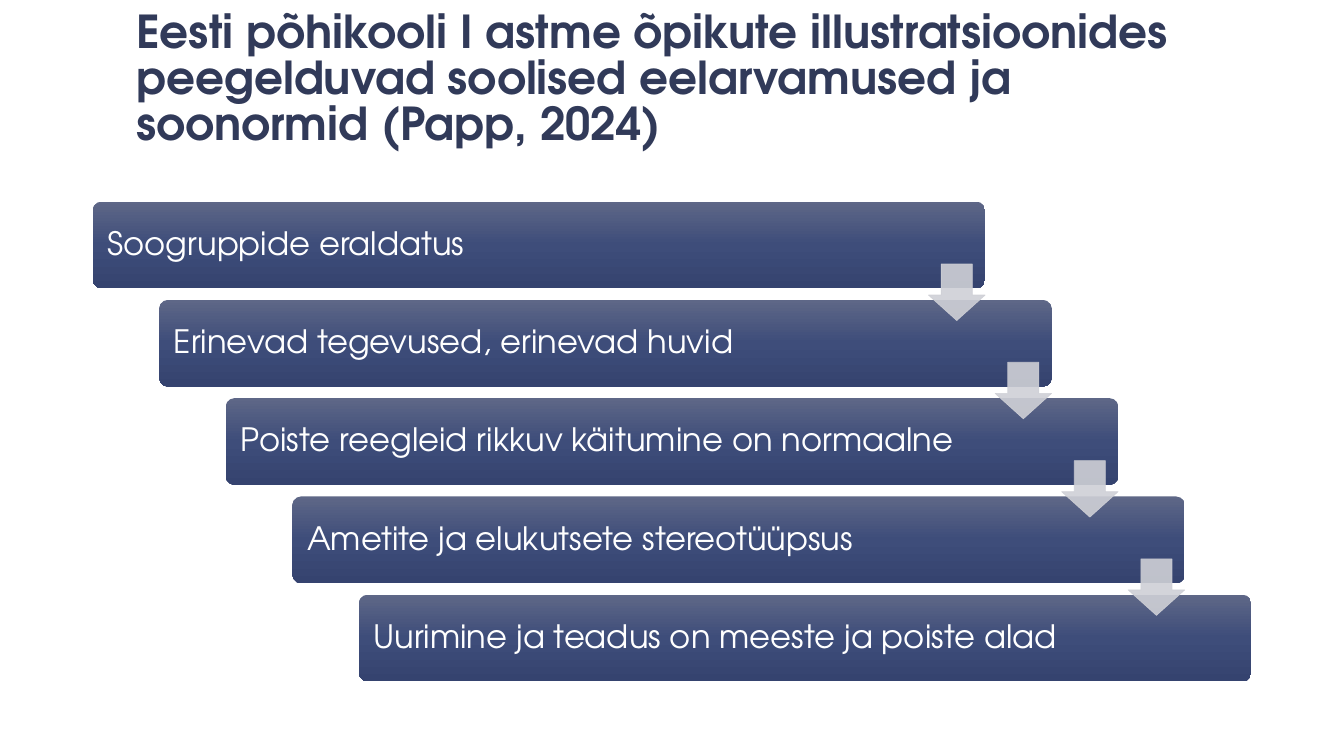
import copy
from dataclasses import dataclass

import pptx
import pptx.dml.color
import pptx.enum.shapes
import pptx.enum.text
import pptx.oxml
import pptx.oxml.ns
import pptx.util
from pptx.util import Inches

SHAPE = pptx.enum.shapes.MSO_SHAPE
ANCHOR = pptx.enum.text.MSO_ANCHOR
qn = pptx.oxml.ns.qn


@dataclass(frozen=True)
class Theme:
    font: str = "TeX Gyre Adventor"
    title_color: str = "313A59"
    bar_text: str = "FFFFFF"
    bar_gradient: tuple[str, ...] = ("5E6787", "3E4D7A", "35436F")
    arrow: str = "CFD0D6"
    arrow_opacity: int = 90
    title_size: float = 32.4
    bar_size: float = 23


@dataclass(frozen=True)
class Box:
    left: float
    top: float
    width: float
    height: float

    def emu(self) -> tuple[int, ...]:
        return tuple(Inches(v) for v in (self.left, self.top, self.width, self.height))


THEME = Theme()
TITLE = "Eesti põhikooli I astme õpikute illustratsioonides peegelduvad soolised eelarvamused ja soonormid (Papp, 2024)"
FINDINGS = (
    "Soogruppide eraldatus",
    "Erinevad tegevused, erinevad huvid",
    "Poiste reegleid rikkuv käitumine on normaalne",
    "Ametite ja elukutsete stereotüüpsus",
    "Uurimine ja teadus on meeste ja poiste alad",
)
FIRST_BAR = Box(0.92, 2, 8.85, 0.86)
STEP_X, STEP_Y = 0.66, 0.975
ARROW_SIZE = 0.56
ARROW_DROP = 0.62


def rgb(color: str) -> pptx.dml.color.RGBColor:
    return pptx.dml.color.RGBColor.from_string(color)


def write(sp, text: str, *, size: float, color: str, bold: bool = False,
          anchor=ANCHOR.MIDDLE, spacing: float = 0.9,
          inset_x: float = 0.12, inset_y: float = 0.1) -> None:
    tf = sp.text_frame
    tf.word_wrap = True
    tf.auto_size = pptx.enum.text.MSO_AUTO_SIZE.NONE
    tf.vertical_anchor = anchor
    tf.margin_left = tf.margin_right = Inches(inset_x)
    tf.margin_top = tf.margin_bottom = Inches(inset_y)
    p = tf.paragraphs[0]
    p.alignment = pptx.enum.text.PP_ALIGN.LEFT
    p.line_spacing = spacing
    p.space_before = pptx.util.Pt(0)
    r = p.add_run()
    r.text = text
    r.font.name = THEME.font
    r.font.size = pptx.util.Pt(size)
    r.font.bold = bold
    r.font.color.rgb = rgb(color)


def fill_gradient(sp, colors: tuple[str, ...]) -> None:
    """Fill from top to bottom with evenly spaced colours."""
    sp.fill.gradient()
    sp.fill.gradient_angle = 270
    stops = sp._element.spPr.find(qn("a:gradFill")).find(qn("a:gsLst"))
    for _ in colors[2:]:
        stops.append(copy.deepcopy(stops[0]))
    for i, (stop, color) in enumerate(zip(sp.fill.gradient_stops, colors)):
        stop.position = i / (len(colors) - 1)
        stop.color.rgb = rgb(color)


def add_bar(s, box: Box, text: str) -> None:
    sp = s.shapes.add_shape(SHAPE.ROUNDED_RECTANGLE, *box.emu())
    sp.shadow.inherit = False
    sp.adjustments[0] = 0.1
    fill_gradient(sp, THEME.bar_gradient)
    sp.line.fill.background()
    write(sp, text, size=THEME.bar_size, color=THEME.bar_text)


def add_arrow(s, box: Box) -> None:
    sp = s.shapes.add_shape(SHAPE.DOWN_ARROW, *box.emu())
    sp.shadow.inherit = False
    sp.adjustments[0], sp.adjustments[1] = 0.55, 0.45
    sp.fill.solid()
    sp.fill.fore_color.rgb = rgb(THEME.arrow)
    sp.line.color.rgb = rgb(THEME.arrow)
    sp.line.width = pptx.util.Pt(0.5)
    for color in sp._element.spPr.iter(qn("a:srgbClr")):
        alpha = pptx.oxml.parse_xml(
            '<a:alpha xmlns:a="http://schemas.openxmlformats.org/drawingml/2006/main"/>')
        alpha.set("val", str(THEME.arrow_opacity * 1000))
        color.append(alpha)


def main() -> None:
    prs = pptx.Presentation()
    prs.slide_width, prs.slide_height = Inches(13.33), Inches(7.5)
    s = prs.slides.add_slide(prs.slide_layouts[5])

    title = s.shapes.title
    title.left, title.top, title.width, title.height = Box(1.22, 0.03, 11.11, 1.53).emu()
    write(title, TITLE, size=THEME.title_size, color=THEME.title_color, bold=True,
          anchor=ANCHOR.BOTTOM, spacing=0.85, inset_x=0.13, inset_y=0.07)

    bars = [Box(FIRST_BAR.left + i * STEP_X, FIRST_BAR.top + i * STEP_Y,
                FIRST_BAR.width, FIRST_BAR.height) for i in range(len(FINDINGS))]
    for bar, finding in zip(bars, FINDINGS):
        add_bar(s, bar, finding)
    for bar in bars[:-1]:
        add_arrow(s, Box(bar.left + bar.width - ARROW_SIZE, bar.top + ARROW_DROP,
                         ARROW_SIZE, ARROW_SIZE))

    prs.save("out.pptx")


if __name__ == "__main__":
    main()
